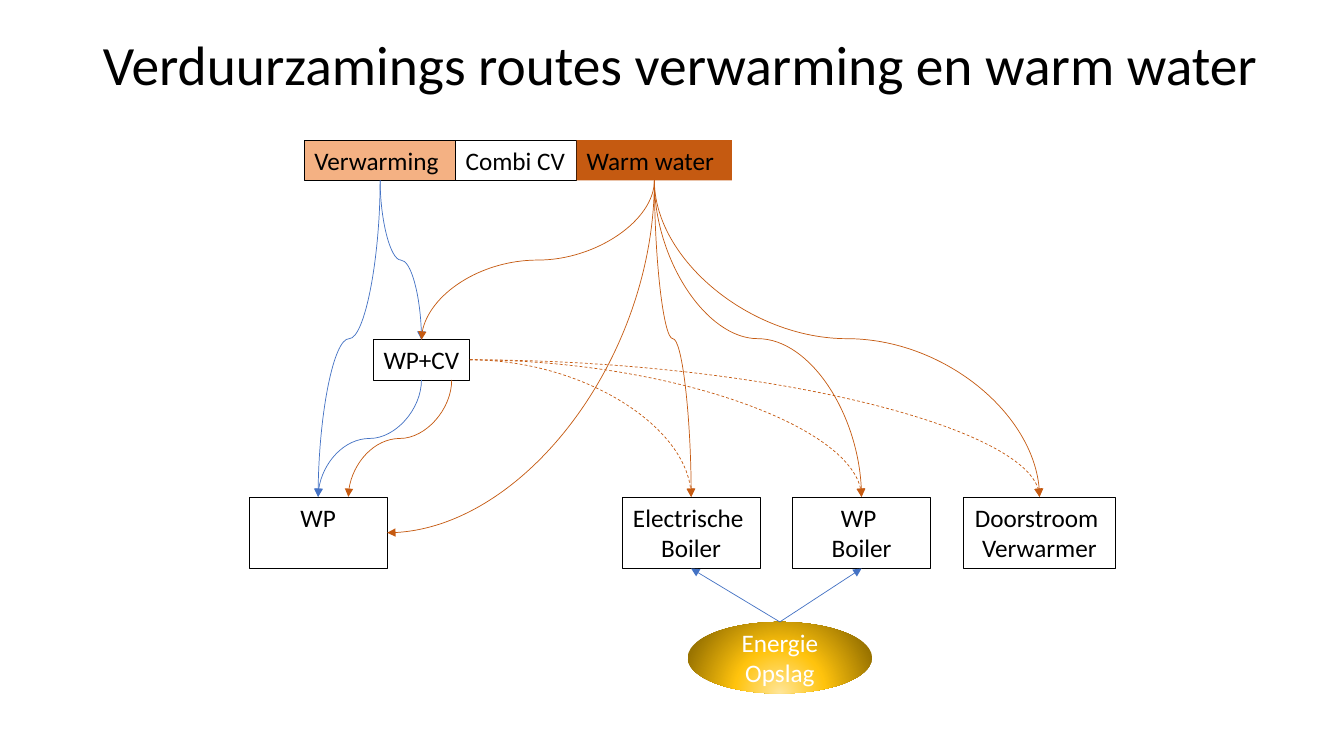
from pptx import Presentation
from pptx import util as u
from pptx.dml.color import RGBColor
from pptx.enum import dml, shapes, text
from pptx.oxml import parse_xml
from pptx.oxml.ns import nsdecls, qn

PX = 9144
BLUE, ORANGE, PEACH, BLACK = "4472C4", "C55A11", "F4B183", "000000"
GOLD = ((0, "FFE699"), (46, "FFC30D"), (100, "997300"))


def px(n):
    return u.Emu(round(n * PX))


def color(fmt, value):
    fmt.rgb = RGBColor.from_string(value)


def style(p, size, value, align=None):
    p.font.name = "Calibri"
    p.font.size = u.Pt(size)
    color(p.font.color, value)
    p.alignment = align


def top(box):
    x, y, w, h = box
    return x + w / 2, y


def bottom(box):
    x, y, w, h = box
    return x + w / 2, y + h


def right(box):
    x, y, w, h = box
    return x + w, y + h / 2


def add_title(s, box):
    sp = s.shapes.title
    sp.left, sp.top, sp.width, sp.height = map(px, box)
    tf = sp.text_frame
    tf.text = "Verduurzamings routes verwarming en warm water"
    tf.auto_size = text.MSO_AUTO_SIZE.NONE
    tf.vertical_anchor = text.MSO_ANCHOR.MIDDLE
    p = tf.paragraphs[0]
    p.line_spacing = 0.9
    style(p, 39.6, BLACK, text.PP_ALIGN.LEFT)


def add_label(s, box, lines, fill=None, line=0.5, align=text.PP_ALIGN.CENTER, wrap=False):
    sp = s.shapes.add_textbox(*map(px, box))
    if fill:
        sp.fill.solid()
        color(sp.fill.fore_color, fill)
    if line:
        color(sp.line.color, BLACK)
        sp.line.width = u.Pt(line)
    tf = sp.text_frame
    tf.word_wrap = wrap
    tf.auto_size = text.MSO_AUTO_SIZE.SHAPE_TO_FIT_TEXT
    tf.text = "\n".join(lines)
    for p in tf.paragraphs:
        style(p, 18, BLACK, align)
    return box


def add_current_system(s, x, y):
    parts = (("Verwarming", 150, PEACH, 0.75), ("Combi CV", 120, None, 0.5),
             ("Warm water", 154, ORANGE, 0))
    boxes = []
    for name, w, fill, line in parts:
        boxes.append(add_label(s, (x, y, w, 40), [name], fill, line, text.PP_ALIGN.LEFT))
        x += w
    return boxes[0], boxes[2]


def add_options(s, x, y):
    parts = ((0, 137, ["WP"], True), (370, 137, ["Electrische ", "Boiler"], False),
             (539, 137, ["WP ", "Boiler"], True), (709, 150, ["Doorstroom ", "Verwarmer"], False))
    return [add_label(s, (x + dx, y, w, 71), lines, wrap=wrap) for dx, w, lines, wrap in parts]


def add_storage(s, box):
    sp = s.shapes.add_shape(shapes.MSO_SHAPE.OVAL, *map(px, box))
    sp.shadow.inherit = False
    stops = "".join(f'<a:gs pos="{pos * 1000}"><a:srgbClr val="{c}"/></a:gs>' for pos, c in GOLD)
    sp._element.spPr.insert(2, parse_xml(
        f'<a:gradFill {nsdecls("a")} rotWithShape="1"><a:gsLst>{stops}</a:gsLst><a:path path="circle">'
        '<a:fillToRect l="50000" t="130000" r="50000" b="-30000"/></a:path></a:gradFill>'))
    sp.line.fill.background()
    tf = sp.text_frame
    tf.word_wrap = True
    tf.vertical_anchor = text.MSO_ANCHOR.MIDDLE
    tf.text = "Energie Opslag"
    style(tf.paragraphs[0], 18, "FFFFFF", text.PP_ALIGN.CENTER)
    return box


def add_arrow(s, start, end, value, kind=shapes.MSO_CONNECTOR.STRAIGHT):
    c = s.shapes.add_connector(kind, *map(px, start + end))
    color(c.line.color, value)
    c.line.width = u.Pt(0.5)
    c.line._get_or_add_ln().append(parse_xml(f'<a:tailEnd {nsdecls("a")} type="triangle"/>'))
    c._element.spPr.append(parse_xml(f'<a:effectLst {nsdecls("a")}/>'))
    return c


def add_downward_curve(s, start, end, value, preset="curvedConnector3"):
    (x1, y1), (x2, y2) = start, end
    cx, cy = (x1 + x2) / 2, (y1 + y2) / 2
    w, h = abs(y2 - y1) / 2, abs(x2 - x1) / 2
    c = add_arrow(s, (cx - w, cy - h), (cx + w, cy + h), value, shapes.MSO_CONNECTOR.CURVE)
    spPr = c._element.spPr
    spPr.find(qn("a:prstGeom")).set("prst", preset)
    xfrm = spPr.find(qn("a:xfrm"))
    if x2 > x1:
        xfrm.set("rot", "16200000")
        xfrm.set("flipH", "1")
    else:
        xfrm.set("rot", "5400000")


def add_sideways_curve(s, start, end, value):
    c = add_arrow(s, start, end, value, shapes.MSO_CONNECTOR.CURVE)
    c._element.spPr.find(qn("a:prstGeom")).set("prst", "curvedConnector2")
    c.line.dash_style = dml.MSO_LINE.DASH


def add_routes(s, heating, water, hybrid, options):
    pump, *heaters = options
    offset = 30
    pump_x, pump_y = top(pump)
    hybrid_x, hybrid_y = bottom(hybrid)
    add_downward_curve(s, bottom(heating), top(hybrid), BLUE)
    add_downward_curve(s, bottom(hybrid), top(pump), BLUE)
    add_downward_curve(s, bottom(heating), top(pump), BLUE)
    add_downward_curve(s, bottom(water), top(hybrid), ORANGE)
    add_downward_curve(s, (hybrid_x + offset, hybrid_y), (pump_x + offset, pump_y), ORANGE)
    for heater in heaters:
        add_downward_curve(s, bottom(water), top(heater), ORANGE)
    add_downward_curve(s, bottom(water), right(pump), ORANGE, "curvedConnector2")
    for heater in heaters:
        add_sideways_curve(s, right(hybrid), top(heater), ORANGE)


def main():
    prs = Presentation()
    prs.slide_width, prs.slide_height = px(1333), px(750)
    s = prs.slides.add_slide(prs.slide_layouts[5])
    add_title(s, (92, 40, 1204, 55))
    heating, water = add_current_system(s, 302, 139)
    hybrid = add_label(s, (370, 337, 96, 40), ["WP+CV"])
    options = add_options(s, 247, 493)
    add_routes(s, heating, water, hybrid, options)
    storage = add_storage(s, (682, 617, 183, 71))
    for boiler in options[1:3]:
        add_arrow(s, top(storage), bottom(boiler), BLUE)
    prs.save("out.pptx")


if __name__ == "__main__":
    main()
